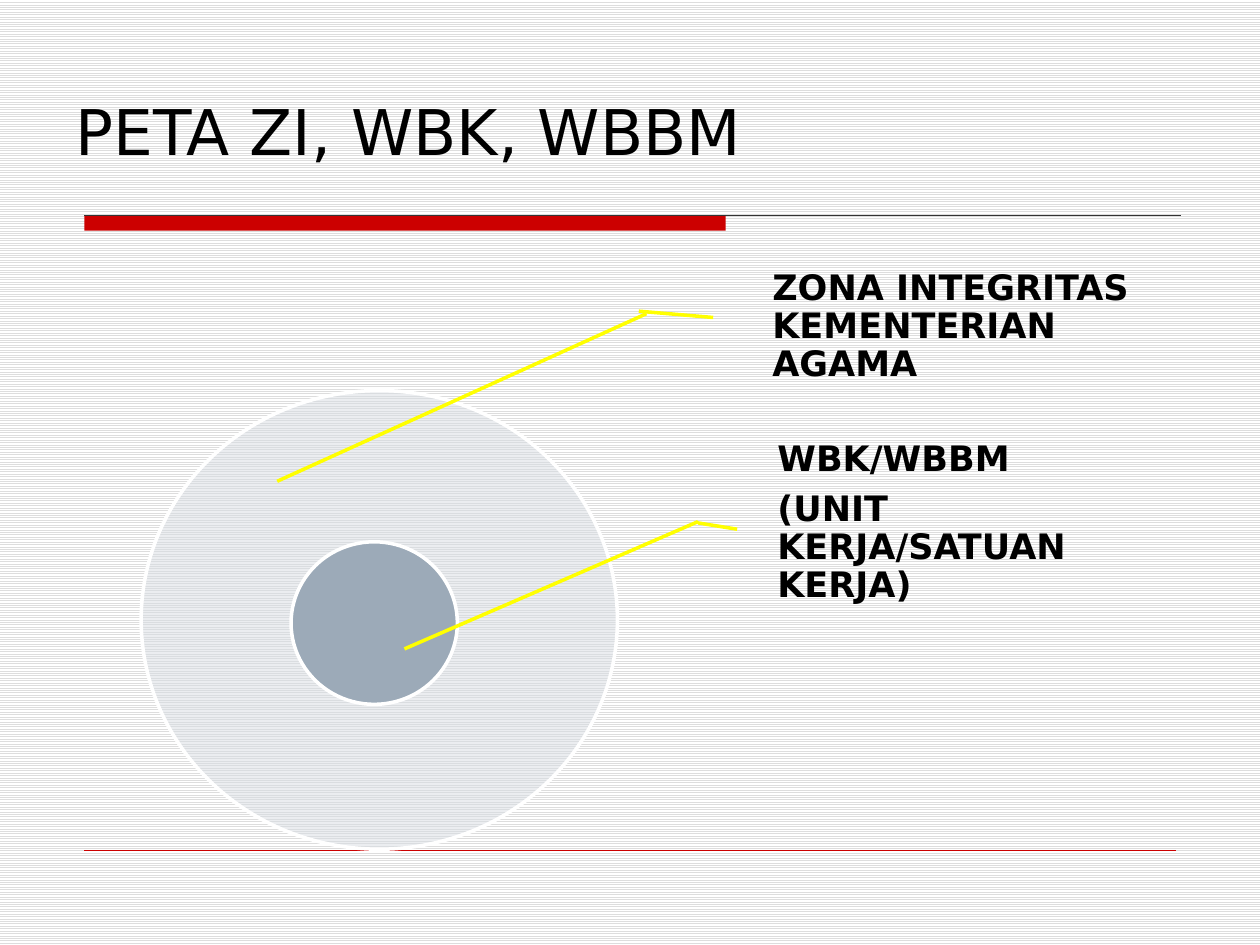
"""Build the PETA ZI, WBK, WBBM slide with nested circles and labels."""
from pptx import Presentation
from pptx import util as u
from pptx.dml import color
from pptx.enum import dml, shapes, text
from pptx.oxml import ns
from lxml import etree

Inches, Pt = u.Inches, u.Pt


def paint(fmt, value):
    if hasattr(fmt, "solid"):
        fmt.solid()
        fmt = fmt.fore_color
    fmt.rgb = color.RGBColor.from_string(value)


def add_text(s, box, lines, size, bold, anchor, insets, spacing, after):
    tf = s.shapes.add_textbox(*map(Inches, box)).text_frame
    tf.word_wrap = True
    tf.vertical_anchor = anchor
    tf.margin_left, tf.margin_top, tf.margin_right, tf.margin_bottom = map(Inches, insets)
    for i, line in enumerate(lines):
        p = tf.paragraphs[0] if i == 0 else tf.add_paragraph()
        p.text = line
        p.line_spacing = spacing
        p.space_after = Pt(after)
        p.font.name = "DejaVu Sans"
        p.font.size = Pt(size)
        p.font.bold = bold
        paint(p.font.color, "000000")


prs = Presentation()
prs.slide_width, prs.slide_height = Inches(10), Inches(7.5)
s = prs.slides.add_slide(prs.slide_layouts[6])

bg = s.background.fill
bg.patterned()
bg.pattern = dml.MSO_PATTERN.LIGHT_HORIZONTAL
paint(bg.fore_color, "DDDDDD")
paint(bg.back_color, "FFFFFF")

bar = s.shapes.add_shape(shapes.MSO_SHAPE.RECTANGLE, Inches(0.67), Inches(1.71), Inches(5.09), Inches(0.12))
bar.shadow.inherit = False
paint(bar.fill, "CC0000")
bar.line.fill.background()

add_text(s, (0.5, 0.13, 9, 1.25), ["PETA ZI, WBK, WBBM"], 36, False,
         text.MSO_ANCHOR.BOTTOM, (0.1, 0.05, 0.1, 0.05), 1.0, 0)

rules = [
    (0.67, 1.71, 9.37, 1.71, "333333", 0.75),
    (0.67, 6.75, 9.33, 6.75, "CC0000", 0.25),
]
callouts = [
    (5.66, 2.52, 5.07, 2.47, "FFFF00", 2),
    (2.2, 3.82, 5.13, 2.49, "FFFF00", 2),
    (5.85, 4.2, 5.54, 4.15, "FFFF00", 2),
    (3.21, 5.15, 5.54, 4.14, "FFFF00", 2),
]
circles = [
    (1.12, 3.1, 3.78, 3.64, "D8DDE3", 50),
    (2.31, 4.3, 1.32, 1.29, "9CAAB8", 100),
]

for group in (rules, circles, callouts):
    for *box, shade, amount in group:
        box = [Inches(v) for v in box]
        if group is circles:
            sp = s.shapes.add_shape(shapes.MSO_SHAPE.OVAL, *box)
            sp.shadow.inherit = False
            paint(sp.fill, shade)
            if amount < 100:
                clr = sp.fill._xPr.find(".//" + ns.qn("a:srgbClr"))
                etree.SubElement(clr, ns.qn("a:alpha"), val=str(amount * 1000))
            paint(sp.line.fill, "FFFFFF")
            sp.line.width = Pt(2)
        else:
            sp = s.shapes.add_connector(shapes.MSO_CONNECTOR.STRAIGHT, *box)
            paint(sp.line.fill, shade)
            sp.line.width = Pt(amount)
            etree.SubElement(sp._element.spPr, ns.qn("a:effectLst"))

labels = [
    ((5.97, 1.77, 3.36, 1.65), ["ZONA INTEGRITAS KEMENTERIAN AGAMA"]),
    ((6.01, 3.46, 3.45, 1.38), ["WBK/WBBM", "(UNIT KERJA/SATUAN KERJA)"]),
]
for box, lines in labels:
    add_text(s, box, lines, 20, True, text.MSO_ANCHOR.MIDDLE,
             (0.16, 0.03, 0.03, 0.03), 0.9, 7)

prs.save("out.pptx")
